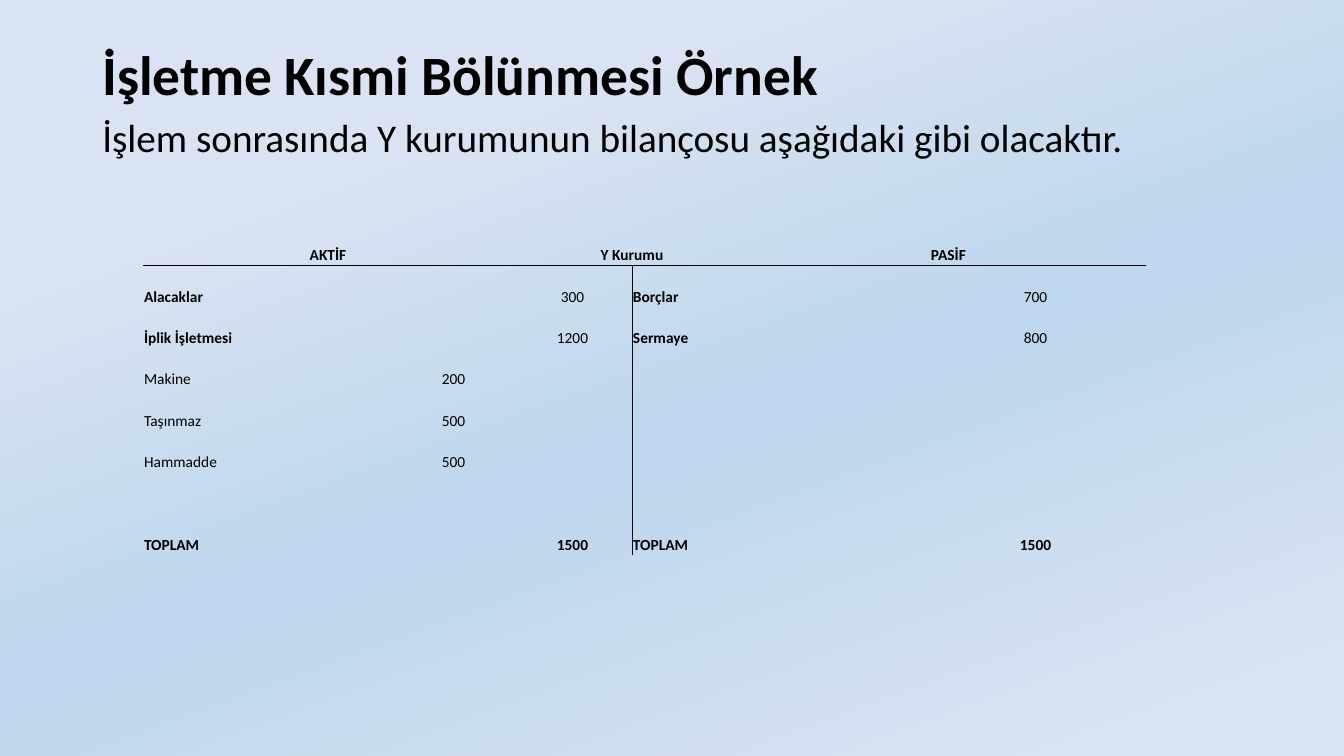
from copy import deepcopy

from lxml import etree
from pptx import Presentation
from pptx.dml.color import RGBColor
from pptx.enum import text
from pptx.oxml.ns import qn
from pptx.util import Pt

TITLE = "İşletme Kısmi Bölünmesi Örnek"
INTRO = "İşlem sonrasında Y kurumunun bilançosu aşağıdaki gibi olacaktır."
HEADINGS = ["AKTİF", "Y Kurumu", "PASİF"]
BALANCE_ROWS = [
    ("Alacaklar", "", "300", "Borçlar", "", "700"),
    ("İplik İşletmesi", "", "1200", "Sermaye", "", "800"),
    ("Makine", "200", "", "", "", ""),
    ("Taşınmaz", "500", "", "", "", ""),
    ("Hammadde", "500", "", "", "", ""),
    ("", "", "", "", "", ""),
    ("TOPLAM", "", "1500", "TOPLAM", "", "1500"),
]
BOLD_LABELS = {"Alacaklar", "İplik İşletmesi", "Borçlar", "Sermaye", "TOPLAM"}
COLUMN_WIDTHS = [179.3, 85, 85, 85, 124.5, 157.6]
ROW_HEIGHT = 29.55
TABLE_LEFT, TABLE_TOP = 102.2, 159.8
LABEL_COLUMNS = (0, 3)
NO_STYLE = "{2D5ABB26-0587-4C30-8999-92F81FD0307C}"

BLACK = RGBColor(0, 0, 0)
LAVENDER = RGBColor(0xDA, 0xE3, 0xF3)
SKY = RGBColor(0xBD, 0xD7, 0xEE)
BACKGROUND_STOPS = [(0.23, LAVENDER), (0.55, SKY), (0.93, LAVENDER)]


def write(frame, content, size, bold=False, align=text.PP_ALIGN.LEFT,
          line_spacing=None, space_before=0):
    paragraph = frame.paragraphs[0]
    paragraph.alignment = align
    paragraph.space_before = Pt(space_before)
    if line_spacing:
        paragraph.line_spacing = line_spacing
    run = paragraph.add_run()
    run.text = content
    run.font.name = "Calibri"
    run.font.size = Pt(size)
    run.font.bold = bold
    run.font.color.rgb = BLACK


def add_text_box(slide, top, height, anchor, content, size, **text_format):
    frame = slide.shapes.add_textbox(Pt(66), Pt(top), Pt(828), Pt(height)).text_frame
    frame.word_wrap = True
    frame.vertical_anchor = anchor
    write(frame, content, size, line_spacing=0.9, **text_format)


def paint_background(slide):
    fill = slide.background.fill
    fill.gradient()
    fill.gradient_angle = 290
    stop_list = slide.element.xpath(".//a:gsLst")[0]
    stop_list.append(deepcopy(stop_list[0]))
    for stop, (position, color) in zip(fill.gradient_stops, BACKGROUND_STOPS):
        stop.position = position
        stop.color.rgb = color


def set_borders(cell, sides):
    properties = cell._tc.get_or_add_tcPr()
    for side in "LRTB":
        line = etree.SubElement(properties, qn(f"a:ln{side}"), w=str(Pt(0.5)))
        if side in sides:
            solid = etree.SubElement(line, qn("a:solidFill"))
            etree.SubElement(solid, qn("a:srgbClr"), val=str(BLACK))
        else:
            etree.SubElement(line, qn("a:noFill"))


def cell_borders(row, column):
    if row == 0:
        return "B"
    return ("T" if row == 1 else "") + {2: "R", 3: "L"}.get(column, "")


def add_balance_sheet(slide):
    row_count = len(BALANCE_ROWS) + 1
    frame = slide.shapes.add_table(
        row_count, len(COLUMN_WIDTHS), Pt(TABLE_LEFT), Pt(TABLE_TOP),
        Pt(sum(COLUMN_WIDTHS)), Pt(ROW_HEIGHT * row_count))
    table = frame.table
    table.first_row = table.horz_banding = False
    frame.element.xpath(".//a:tableStyleId")[0].text = NO_STYLE
    for column, width in zip(table.columns, COLUMN_WIDTHS):
        column.width = Pt(width)
    for row in table.rows:
        row.height = Pt(ROW_HEIGHT)

    heading_row = [part for heading in HEADINGS for part in (heading, "")]
    for row, contents in enumerate([heading_row, *BALANCE_ROWS]):
        for column, content in enumerate(contents):
            cell = table.cell(row, column)
            cell.margin_left = cell.margin_right = cell.margin_top = Pt(0.7)
            cell.margin_bottom = 0
            cell.vertical_anchor = text.MSO_ANCHOR.BOTTOM
            set_borders(cell, cell_borders(row, column))
            cell.fill.background()
            if content:
                is_label = row > 0 and column in LABEL_COLUMNS
                write(cell.text_frame, content, 11,
                      bold=row in (0, row_count - 1) or content in BOLD_LABELS,
                      align=text.PP_ALIGN.LEFT if is_label else text.PP_ALIGN.CENTER)
    for column in range(0, len(COLUMN_WIDTHS), 2):
        table.cell(0, column).merge(table.cell(0, column + 1))


def main():
    presentation = Presentation()
    presentation.slide_width, presentation.slide_height = Pt(960), Pt(540)
    slide = presentation.slides.add_slide(presentation.slide_layouts[6])
    paint_background(slide)
    add_text_box(slide, 28.8, 52.6, text.MSO_ANCHOR.MIDDLE, TITLE, 39.6, bold=True)
    add_text_box(slide, 81.4, 404.6, text.MSO_ANCHOR.TOP, INTRO, 28, space_before=10)
    add_balance_sheet(slide)
    presentation.save("out.pptx")


if __name__ == "__main__":
    main()
